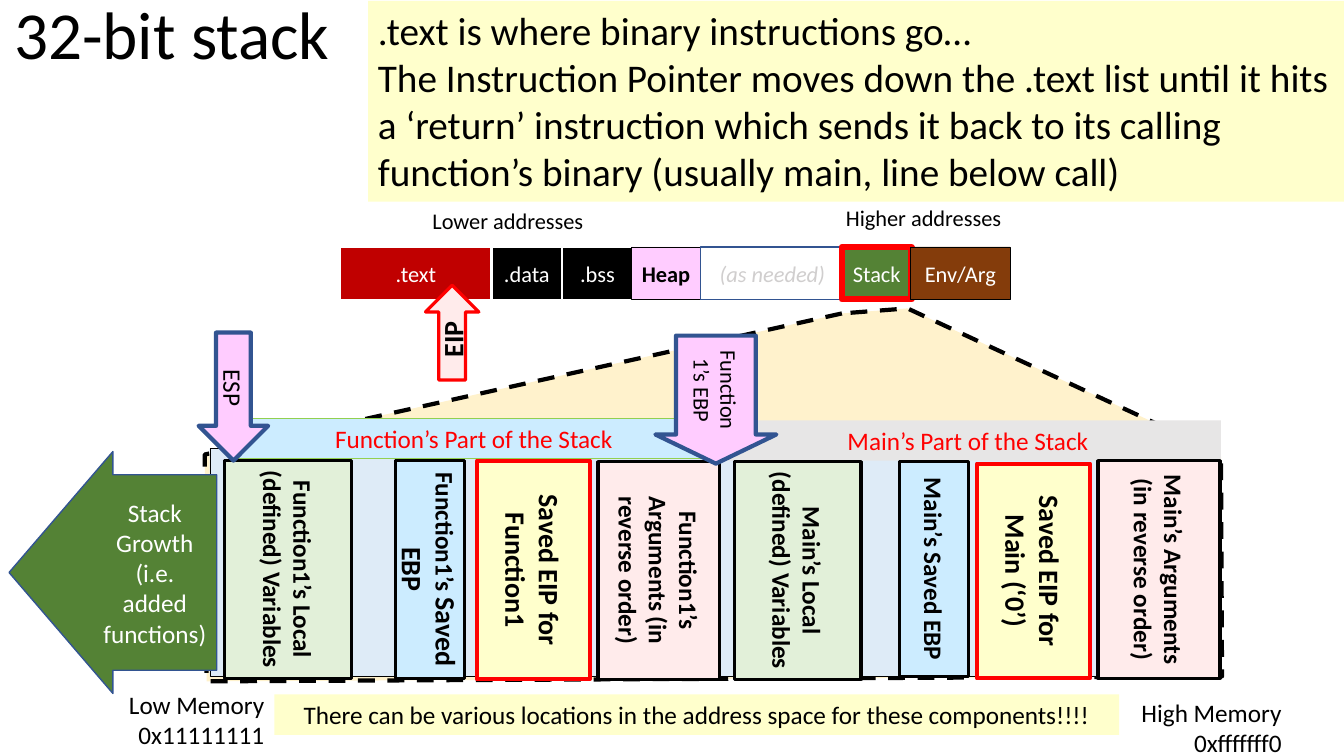
from pptx import Presentation
from pptx.dml.color import RGBColor
from pptx.enum.dml import MSO_LINE
from pptx.enum.shapes import MSO_SHAPE as SHAPE
from pptx.enum.text import MSO_ANCHOR as ANCHOR, MSO_AUTO_SIZE, PP_ALIGN as ALIGN
from pptx.util import Inches, Pt

BLACK = RGBColor(0x00, 0x00, 0x00)
WHITE = RGBColor(0xFF, 0xFF, 0xFF)
RED = RGBColor(0xFF, 0x00, 0x00)
DARK_RED = RGBColor(0xC0, 0x00, 0x00)
GREEN = RGBColor(0x54, 0x82, 0x35)
LIME = RGBColor(0x92, 0xD0, 0x50)
PALE_GREEN = RGBColor(0xE2, 0xF0, 0xD9)
NAVY = RGBColor(0x32, 0x54, 0x91)
SKY = RGBColor(0xCC, 0xEC, 0xFF)
PALE_BLUE = RGBColor(0xDE, 0xEB, 0xF7)
PINK = RGBColor(0xFF, 0xCC, 0xFF)
ROSE = RGBColor(0xFF, 0xEB, 0xEB)
CREAM = RGBColor(0xFF, 0xFF, 0xCC)
SAND = RGBColor(0xFF, 0xF2, 0xCC)
BROWN = RGBColor(0x84, 0x3C, 0x0B)
GREY = RGBColor(0xE7, 0xE6, 0xE6)
SILVER = RGBColor(0xD0, 0xCE, 0xCE)


def write_text(shape, text, size=18, color=BLACK, bold=False, italic=False,
               align=ALIGN.CENTER, anchor=ANCHOR.MIDDLE, tail="", tail_size=None):
    frame = shape.text_frame
    frame.word_wrap = True
    frame.auto_size = MSO_AUTO_SIZE.NONE
    frame.vertical_anchor = anchor
    for index, line in enumerate(text.split("\n")):
        paragraph = frame.add_paragraph() if index else frame.paragraphs[0]
        paragraph.alignment = align
        for run_text, run_size in ((line, size), (tail, tail_size)):
            if run_text:
                run = paragraph.add_run()
                run.text = run_text
                font = run.font
                font.name, font.size = "Calibri", Pt(run_size)
                font.bold, font.italic = bold, italic
                font.color.rgb = color


def style_shape(shape, fill, line=None, width=1):
    shape.shadow.inherit = False
    shape.fill.solid()
    shape.fill.fore_color.rgb = fill
    if line is None:
        shape.line.fill.background()
    else:
        shape.line.color.rgb = line
        shape.line.width = Pt(width)


def add_block(shapes, box, fill, line=None, width=1, kind=SHAPE.RECTANGLE, turn=0):
    left, top, wide, high = box
    if turn:
        left, top = left + (wide - high) / 2, top + (high - wide) / 2
        wide, high = high, wide
    shape = shapes.add_shape(kind, *map(Inches, (left, top, wide, high)))
    shape.rotation = turn
    style_shape(shape, fill, line, width)
    return shape


def add_label(shapes, box, text, **text_format):
    label = shapes.add_textbox(*map(Inches, box))
    write_text(label, text, anchor=ANCHOR.TOP, **text_format)


def add_title(slide, box):
    title = slide.shapes.title
    title.left, title.top, title.width, title.height = map(Inches, box)
    write_text(title, "32-bit stack", size=48, align=ALIGN.LEFT)
    title.text_frame.margin_right = 0
    title.text_frame.paragraphs[0].line_spacing = 0.9


def add_zoom(shapes, left, top):
    corners = [(6.32, 0.05), (0, 1.45), (0.02, 3.7), (10.09, 3.65), (10.08, 1.44), (6.97, 0)]
    points = [(Inches(left + x), Inches(top + y)) for x, y in corners]
    builder = shapes.build_freeform(*points[0], scale=1.0)
    builder.add_line_segments(points[1:], close=True)
    zoom = builder.convert_to_shape()
    style_shape(zoom, SAND, BLACK, 3)
    zoom.line.dash_style = MSO_LINE.DASH


def add_memory_ends(shapes, top):
    for left, down, wide, text in ((10.35, 0.08, 2.46, "High Memory\n0xfffffff0"),
                                   (0.24, 0, 2.48, "Low Memory\n0x11111111")):
        add_label(shapes, (left, top + down, wide, 0.71), text, align=ALIGN.RIGHT)


def add_growth_arrow(shapes, box):
    arrow = add_block(shapes, box, GREEN, NAVY, kind=SHAPE.LEFT_ARROW)
    arrow.adjustments[0] = 0.808
    write_text(arrow, "Stack Growth\n(i.e. added functions)", color=WHITE)


def add_address_space(slide, left, top):
    shapes = slide.shapes.add_group_shape().shapes
    segments = [
        (".text", 0, 1.49, DARK_RED, WHITE, 1, {}),
        (".data", 1.5, 0.69, BLACK, WHITE, 1, {}),
        (".bss", 2.2, 0.69, BLACK, WHITE, 1, {}),
        ("Heap", 2.88, 0.69, PINK, BLACK, 0.5, {"color": BLACK, "bold": True}),
        ("(as needed)", 3.57, 1.42, WHITE, NAVY, 1, {"color": SILVER, "italic": True}),
        ("Stack", 4.97, 0.69, GREEN, RED, 4.5, {}),
        ("Env/Arg", 5.65, 0.99, BROWN, BLACK, 0.5, {}),
    ]
    for name, offset, wide, fill, line, width, text_format in segments:
        segment = add_block(shapes, (left + offset, top, wide, 0.52), fill, line, width)
        write_text(segment, name, size=16, **{"color": WHITE, **text_format})
    add_label(shapes, (left + 4.74, top - 0.47, 1.91, 0.37), "Higher addresses",
              size=16, align=ALIGN.RIGHT)
    add_label(shapes, (left + 0.81, top - 0.44, 1.91, 0.37), "Lower addresses",
              size=16, align=ALIGN.LEFT)


def add_banner(shapes, box, text, fill, line=None, **text_format):
    banner = add_block(shapes, box, fill, line, 0.75)
    write_text(banner, text, anchor=ANCHOR.TOP, **text_format)


def add_stack_frames(shapes, left, top):
    frames = [
        ("Main’s Saved EBP", 6.69, 0.01, 0.69, 2.13, SKY, {}),
        ("Saved EIP for Main (‘0’)", 7.46, 0.03, 1.12, 2.13, CREAM, {"size": 20}),
        ("Main’s Arguments (in reverse order)", 8.66, 0, 1.21, 2.16, ROSE, {}),
        ("Main’s Local (defined) Variables", 5.05, 0.01, 1.26, 2.16, PALE_GREEN, {}),
        ("Function1’s", 1.69, 0, 0.69, 2.16, SKY, {"tail": " Saved EBP", "tail_size": 20}),
        ("Saved EIP for Function1", 2.5, 0, 1.12, 2.17, CREAM, {"size": 20}),
        ("Function1’s Arguments (in reverse order)", 3.7, 0.01, 1.21, 2.16, ROSE, {}),
        ("Function1’s Local (defined) Variables", 0, 0, 1.26, 2.16, PALE_GREEN, {}),
    ]
    for text, across, down, wide, high, fill, text_format in frames:
        line, width = (RED, 3) if fill == CREAM else (BLACK, 2.25)
        frame = add_block(shapes, (left + across, top + down, wide, high),
                          fill, line, width, turn=90)
        write_text(frame, text, bold=True, **text_format)


def add_pointer(shapes, box, text, fill, line, width, turn=90, adjustments=(0.5, 0.5),
                **text_format):
    pointer = add_block(shapes, box, fill, line, width, SHAPE.RIGHT_ARROW, turn)
    for index, value in enumerate(adjustments):
        pointer.adjustments[index] = value
    write_text(pointer, text, **text_format)


def build_stack_slide(presentation):
    slide = presentation.slides.add_slide(presentation.slide_layouts[5])
    shapes = slide.shapes
    add_title(slide, (0.04, 0.09, 3.34, 0.56))
    add_zoom(shapes, 2.03, 3.06)
    add_block(shapes, (2.08, 4.45, 10.02, 2.26), PALE_BLUE, BLACK, 0.25)
    add_memory_ends(shapes, 6.79)
    add_growth_arrow(shapes, (0.09, 4.48, 2.06, 2.4))
    add_address_space(slide, 3.38, 2.45)
    add_banner(shapes, (2.33, 4.15, 4.74, 0.4), "Function’s Part of the Stack",
               SKY, LIME, color=RED)
    add_banner(shapes, (7.09, 4.17, 5.02, 0.4), "Main’s Part of the Stack", GREY, color=RED)
    add_stack_frames(shapes, 2.23, 4.57)
    add_banner(shapes, (2.72, 6.89, 8.38, 0.4),
               "There can be various locations in the address space for these components!!!!",
               CREAM)
    add_pointer(shapes, (1.97, 3.3, 0.69, 1.27), "ESP", PINK, NAVY, 3)
    add_pointer(shapes, (6.5, 3.33, 1.2, 1.27), "Function1’s EBP", PINK, NAVY, 3,
                adjustments=(0.659, 0.241), size=16)
    add_pointer(shapes, (4.22, 2.83, 0.53, 0.94), "EIP", ROSE, RED, 2.25, turn=270,
                size=20, bold=True)
    add_banner(shapes, (3.65, 0.01, 9.69, 1.99),
               ".text is where binary instructions go…\n"
               "The Instruction Pointer moves down the .text list until it hits a ‘return’ "
               "instruction which sends it back to its calling function’s binary "
               "(usually main, line below call)",
               CREAM, size=28, align=ALIGN.LEFT)


def main():
    presentation = Presentation()
    presentation.slide_width = Inches(13.33)
    presentation.slide_height = Inches(7.5)
    build_stack_slide(presentation)
    presentation.save("out.pptx")


if __name__ == "__main__":
    main()
